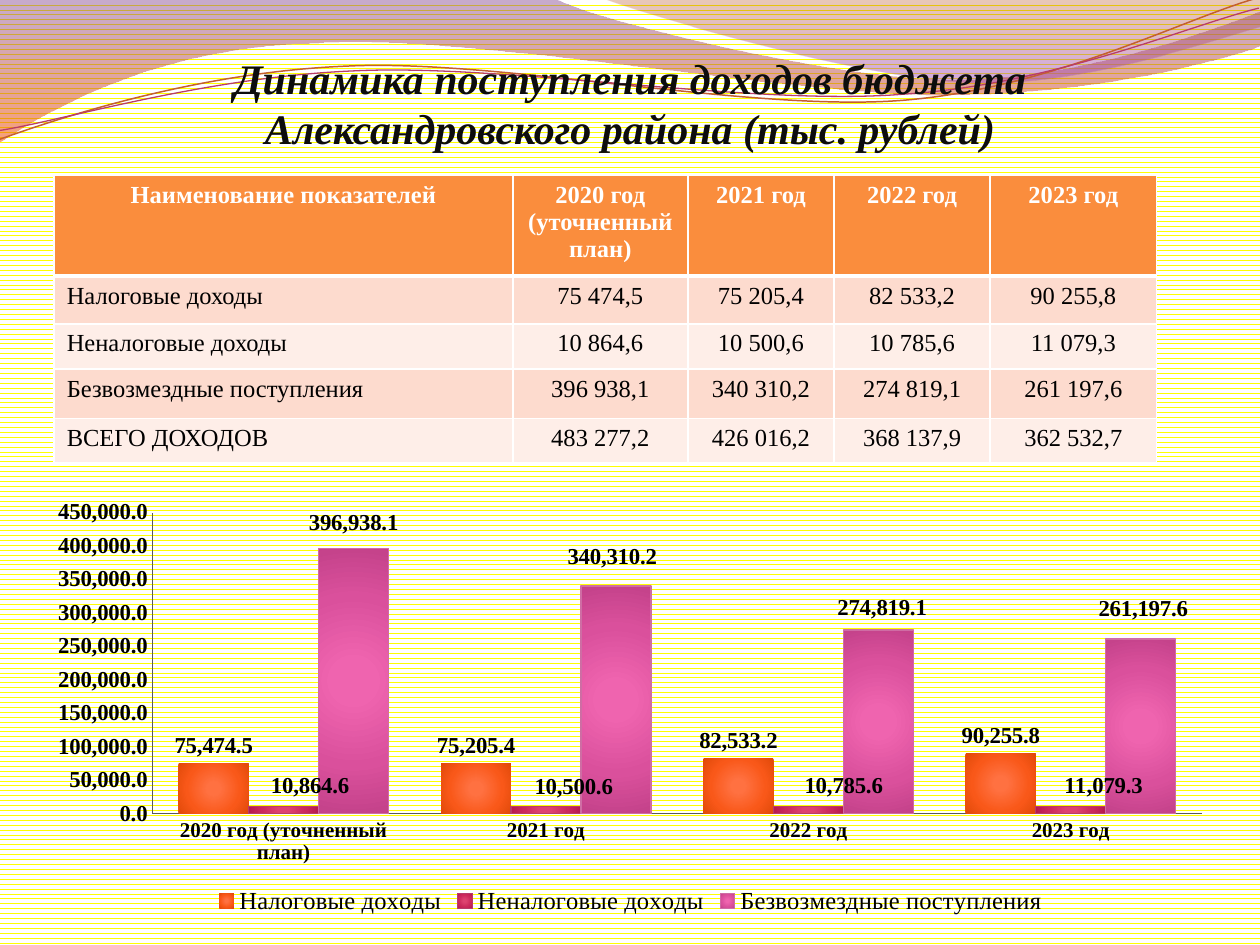
from lxml.etree import SubElement
from pptx import Presentation
from pptx.chart.data import CategoryChartData
from pptx.dml.color import RGBColor
from pptx.enum.chart import XL_CHART_TYPE, XL_LABEL_POSITION, XL_LEGEND_POSITION, XL_TICK_MARK
from pptx.enum.dml import MSO_PATTERN
from pptx.enum.text import MSO_ANCHOR, MSO_AUTO_SIZE, PP_ALIGN
from pptx.oxml.ns import qn
from pptx.util import Inches, Pt

FONT = "Times New Roman"
COLORS = {"stripe": "FFFF00", "white": "FFFFFF", "black": "000000", "title": "0D0D0D",
          "header": "FA8D3D", "odd": "FDDBCE", "even": "FEEEE8", "axis": "595959"}

TITLE = "Динамика поступления доходов бюджета Александровского района (тыс. рублей)"
YEARS = ["2020 год (уточненный план)", "2021 год", "2022 год", "2023 год"]
INCOME = {
    "Налоговые доходы": (75474.5, 75205.4, 82533.2, 90255.8),
    "Неналоговые доходы": (10864.6, 10500.6, 10785.6, 11079.3),
    "Безвозмездные поступления": (396938.1, 340310.2, 274819.1, 261197.6),
}
TOTALS = (483277.2, 426016.2, 368137.9, 362532.7)
COLUMN_WIDTHS = (3.64, 1.39, 1.16, 1.24, 1.32)
ROW_HEIGHTS = (0.8, 0.38, 0.36, 0.39, 0.35)
CHART_WIDTH, CHART_HEIGHT = 9.45, 3.39

# Gradient tints at 0, 15, 62, 97 and 100 %, outline, label shifts in inches
STOPS = (0, 15, 62, 97, 100)
SERIES_STYLES = [
    (("FF7242", "FF7141", "F95819", "E34B0B", "E04800"), None, ()),
    (("DF4370", "DE4370", "CB2A5C", "B81C4F", "B80F4A"), "B83D68",
     ((0.21, -0.02), (0.22, -0.02), (0.28, -0.02), (0.26, -0.02))),
    (("F065B0", "EF64AF", "DA509C", "C5438B", "C43D89"), "CF6DA4",
     ((0, -0.06), (-0.03, -0.09), (0.03, -0.03), (0.02, -0.1))),
]

# Each wave: a start, then segments of one point (straight) or three (Bezier curve)
BANDS = [
    ((0, 0), [[(4.4, -0.01)],
              [(4.76, 0.17), (6.64, 0.63), (7.58, 0.63)],
              [(8.53, 0.63), (9.58, 0.26), (10, 0.09)],
              [(10.01, 0.36)],
              [(9.83, 0.44), (8.7, 0.76), (7.46, 0.75)],
              [(6.22, 0.75), (3.82, 0.28), (2.57, 0.34)],
              [(1.29, 0.36), (0.46, 0.83), (-0.01, 1.13)]],
     [(0, "834591", 45), (100, "F35307", 55)]),
    ((4.79, -0.01), [[(5.09, 0.11), (6.82, 0.62), (7.69, 0.65)],
                     [(8.56, 0.69), (9.61, 0.32), (10, 0.21)],
                     [(10, 0)]],
     [(0, "B74915", 30), (80, "A14BB4", 45)]),
]
STRAND_ROTATION = -2.7
STRANDS = [
    ((-0.02, 0.87), [[(0.47, 0.72), (1.58, 0.41), (2.77, 0.42)],
                     [(3.96, 0.42), (5.91, 0.93), (7.12, 0.9)],
                     [(8.32, 0.87), (9.4, 0.36), (10, 0.22)]], "C45F30", 0.85),
    ((-0.02, 0.8), [[(0.46, 0.75), (1.64, 0.45), (2.83, 0.46)],
                    [(4.03, 0.46), (5.96, 0.89), (7.16, 0.85)],
                    [(8.35, 0.83), (9.42, 0.42), (10.01, 0.3)]], "B83D68", 0.75),
]


def rgb(value):
    return RGBColor.from_string(value)


def style_font(font, size, color=COLORS["black"], **flags):
    font.name, font.size = FONT, Pt(size)
    font.color.rgb = rgb(color)
    for name, value in flags.items():
        setattr(font, name, value)


def set_gradient(fill, owner, stops, radial=False):
    """Fill with (percent, colour, opacity) stops, top to bottom or from the centre."""
    fill.gradient()
    gradient = next(owner.iter(qn("a:gradFill")))
    for child in list(gradient):
        gradient.remove(child)
    stop_list = SubElement(gradient, qn("a:gsLst"))
    for percent, color, opacity in stops:
        stop = SubElement(stop_list, qn("a:gs"), pos=str(percent * 1000))
        tint = SubElement(stop, qn("a:srgbClr"), val=color)
        if opacity < 100:
            SubElement(tint, qn("a:alpha"), val=str(opacity * 1000))
    if radial:
        circle = SubElement(gradient, qn("a:path"), path="circle")
        SubElement(circle, qn("a:fillToRect"), dict.fromkeys("ltrb", "50000"))
    else:
        SubElement(gradient, qn("a:lin"), ang="5400000", scaled="0")


def add_wave(page, start, segments, close):
    """Draw straight lines through all points, then join each three into a curve."""
    points = [(Inches(x), Inches(y)) for segment in segments for x, y in segment]
    builder = page.shapes.build_freeform(Inches(start[0]), Inches(start[1]))
    builder.add_line_segments(points, close=close)
    wave = builder.convert_to_shape()
    wave.shadow.inherit = False
    lines = iter(list(wave._element.iter(qn("a:lnTo"))))
    for segment in segments:
        first, *others = [next(lines) for _ in segment]
        if others:
            curve = first.makeelement(qn("a:cubicBezTo"))
            first.addprevious(curve)
            for line in (first, *others):
                curve.append(line[0])
                line.getparent().remove(line)
    return wave


def add_waves(page):
    for start, segments, stops in BANDS:
        band = add_wave(page, start, segments, True)
        set_gradient(band.fill, band._element, stops)
        band.line.fill.background()
    for start, segments, color, width in STRANDS:
        strand = add_wave(page, start, segments, False)
        strand.rotation = STRAND_ROTATION
        strand.fill.background()
        strand.line.color.rgb, strand.line.width = rgb(color), Pt(width)


def add_title(page):
    title = page.shapes.title
    page.shapes._spTree.append(title._element)  # in front of the waves
    title.left, title.top, title.width, title.height = map(Inches, (0.59, 0.36, 8.82, 0.91))
    frame = title.text_frame
    frame.text = TITLE
    frame.word_wrap, frame.auto_size = True, MSO_AUTO_SIZE.NONE
    frame.vertical_anchor = MSO_ANCHOR.MIDDLE
    para = frame.paragraphs[0]
    para.alignment = PP_ALIGN.CENTER
    style_font(para.runs[0].font, 24, COLORS["title"], bold=True, italic=True)


def format_cell(cell, text, fill, color, bold, centred, widths):
    cell.text = text
    para = cell.text_frame.paragraphs[0]
    para.alignment = PP_ALIGN.CENTER if centred else PP_ALIGN.LEFT
    style_font(para.runs[0].font, 14, color, bold=bold)
    properties = cell._tc.get_or_add_tcPr()
    for side, width in zip("LRTB", widths):
        border = SubElement(properties, qn(f"a:ln{side}"), w=str(Pt(width)))
        SubElement(SubElement(border, qn("a:solidFill")), qn("a:srgbClr"), val=COLORS["white"])
    cell.fill.solid()
    cell.fill.fore_color.rgb = rgb(fill)


def add_income_table(page):
    amounts = {**INCOME, "ВСЕГО ДОХОДОВ": TOTALS}
    rows = [["Наименование показателей", *YEARS]]
    rows += [[name, *(f"{v:,.1f}".replace(",", " ").replace(".", ",") for v in values)]
             for name, values in amounts.items()]
    table = page.shapes.add_table(len(rows), len(rows[0]), Inches(0.43), Inches(1.39),
                                  Inches(sum(COLUMN_WIDTHS)), Inches(sum(ROW_HEIGHTS))).table
    for column, width in zip(table.columns, COLUMN_WIDTHS):
        column.width = Inches(width)
    for r, (row, height) in enumerate(zip(rows, ROW_HEIGHTS)):
        table.rows[r].height = Inches(height)
        header = r == 0
        fill = COLORS["header" if header else "odd" if r % 2 else "even"]
        color = COLORS["white" if header else "black"]
        widths = (1, 1, 3 if r == 1 else 1, 3 if header else 1)
        for c, text in enumerate(row):
            format_cell(table.cell(r, c), text, fill, color, header, header or c > 0, widths)


def set_layout(parent, index, x, y, size=None):
    """Shift a label, or place the plot when a size is given, in inches."""
    for old in parent.findall(qn("c:layout")):
        parent.remove(old)
    layout = parent.makeelement(qn("c:layout"))
    parent.insert(index, layout)
    values = {"x": x / CHART_WIDTH, "y": y / CHART_HEIGHT}
    if size:
        values = {"layoutTarget": "inner", "xMode": "edge", "yMode": "edge", **values,
                  "w": size[0] / CHART_WIDTH, "h": size[1] / CHART_HEIGHT}
    manual = SubElement(layout, qn("c:manualLayout"))
    for name, value in values.items():
        SubElement(manual, qn(f"c:{name}"), val=str(value))


def add_income_chart(page):
    data = CategoryChartData(number_format="#,##0.0")
    data.categories = YEARS
    for name, values in INCOME.items():
        data.add_series(name, values)
    chart = page.shapes.add_chart(XL_CHART_TYPE.COLUMN_CLUSTERED, Inches(0.28), Inches(3.91),
                                  Inches(CHART_WIDTH), Inches(CHART_HEIGHT), data).chart
    style_font(chart.font, 14)
    chart.has_title, chart.has_legend = False, True
    chart.legend.position, chart.legend.include_in_layout = XL_LEGEND_POSITION.BOTTOM, False
    for axis, size in ((chart.category_axis, 12), (chart.value_axis, 13)):
        axis.has_major_gridlines = False
        axis.major_tick_mark = axis.minor_tick_mark = XL_TICK_MARK.NONE
        style_font(axis.tick_labels.font, size, bold=True)
        axis.format.line.color.rgb, axis.format.line.width = rgb(COLORS["axis"]), Pt(0.75)
    labels = chart.value_axis.tick_labels
    labels.number_format, labels.number_format_is_linked = "#,##0.0", False
    plot = chart.plots[0]
    plot.gap_width, plot.overlap, plot.vary_by_categories = 75, 0, False
    set_layout(chart._chartSpace.chart.plotArea, 0, 0.93, 0.16, size=(8.33, 2.39))
    for series, (tints, outline, shifts) in zip(plot.series, SERIES_STYLES):
        stops = [(percent, tint, 100) for percent, tint in zip(STOPS, tints)]
        set_gradient(series.format.fill, series._element, stops, radial=True)
        if outline:
            series.format.line.color.rgb, series.format.line.width = rgb(outline), Pt(0.75)
        labels = series.data_labels
        labels.show_value, labels.position = True, XL_LABEL_POSITION.OUTSIDE_END
        labels.number_format, labels.number_format_is_linked = "#,##0.0", False
        style_font(labels.font, 13, bold=True)
        for leader in series._element.iter(qn("c:showLeaderLines")):
            leader.set("val", "0")
        for i, (x, y) in enumerate(shifts):
            label = series.points[i].data_label
            label.position = XL_LABEL_POSITION.OUTSIDE_END
            style_font(label.font, 13, bold=True)
            set_layout(label._dLbl, 1, x, y)


def main():
    deck = Presentation()
    deck.slide_width, deck.slide_height = Inches(10), Inches(7.5)
    page = deck.slides.add_slide(deck.slide_layouts[5])
    backdrop = page.background.fill
    backdrop.patterned()
    backdrop.pattern = MSO_PATTERN.WAVE
    backdrop.fore_color.rgb = rgb(COLORS["stripe"])
    backdrop.back_color.rgb = rgb(COLORS["white"])
    add_waves(page)
    add_title(page)
    add_income_table(page)
    add_income_chart(page)
    deck.save("out.pptx")


if __name__ == "__main__":
    main()
